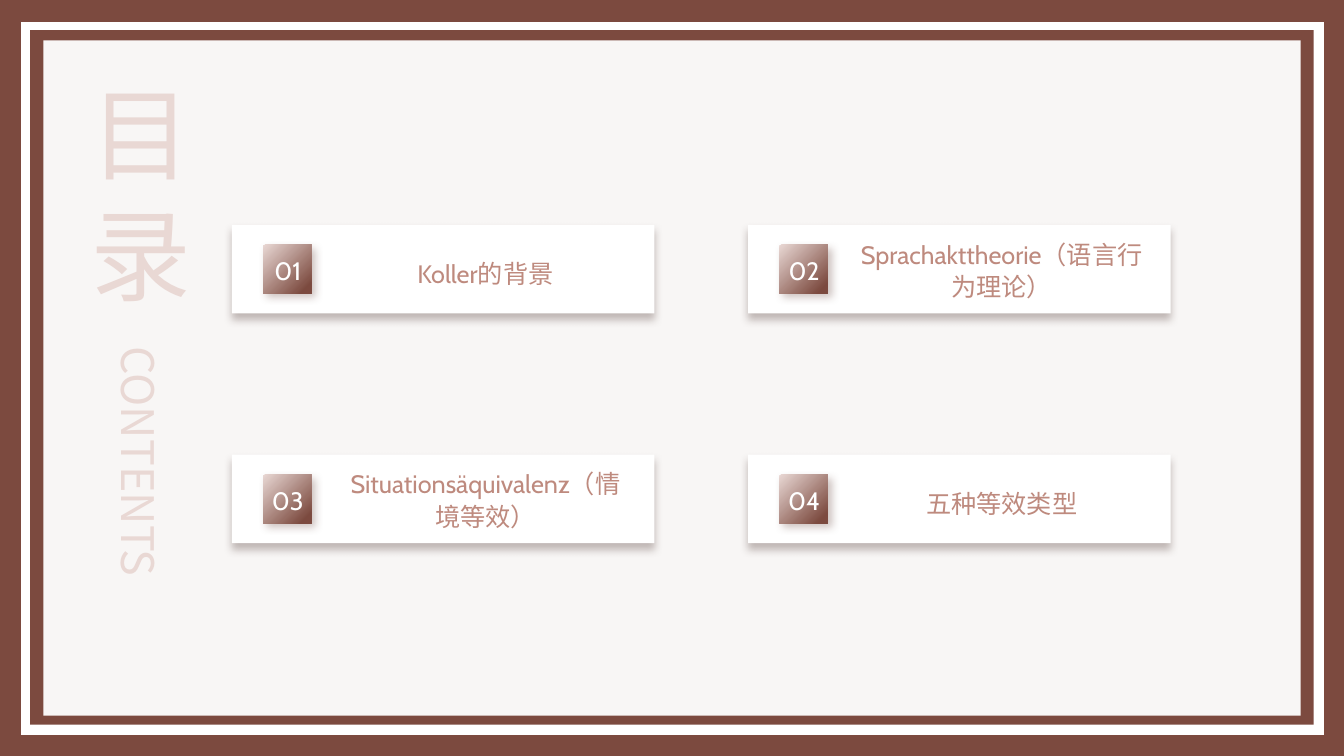
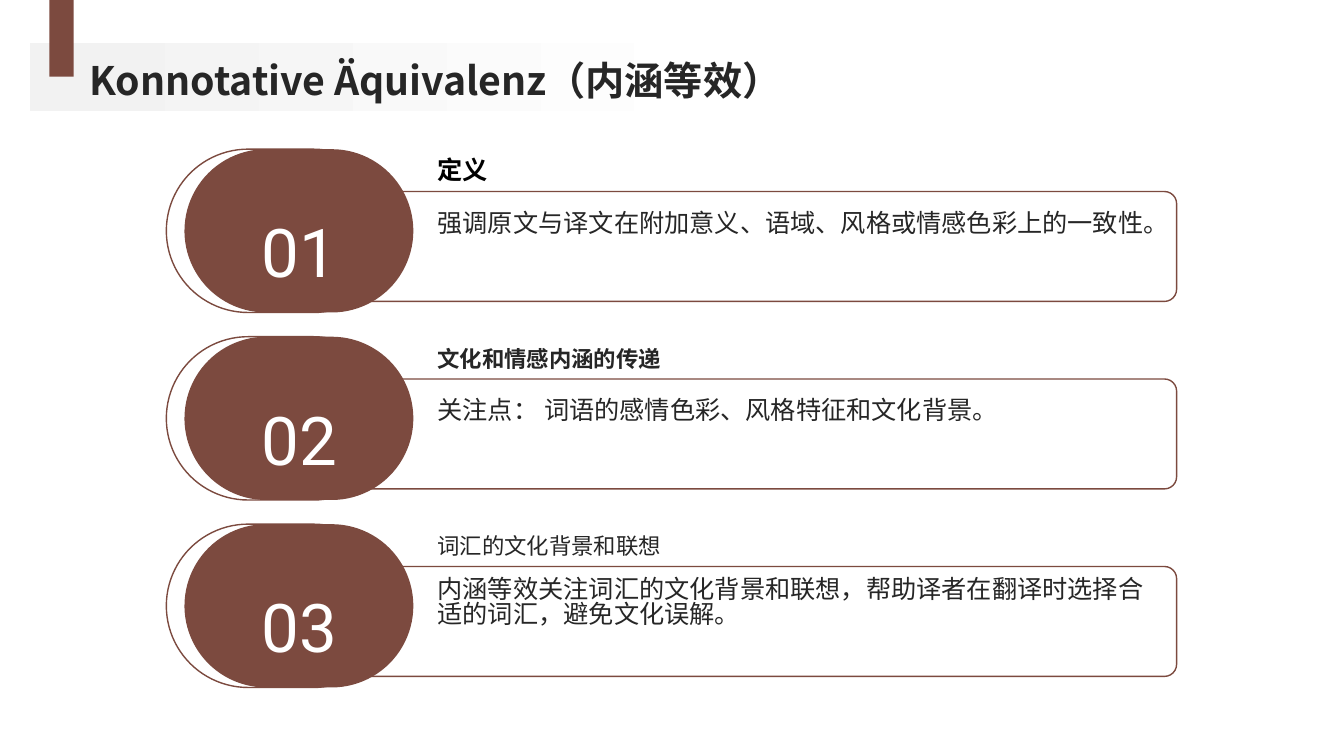
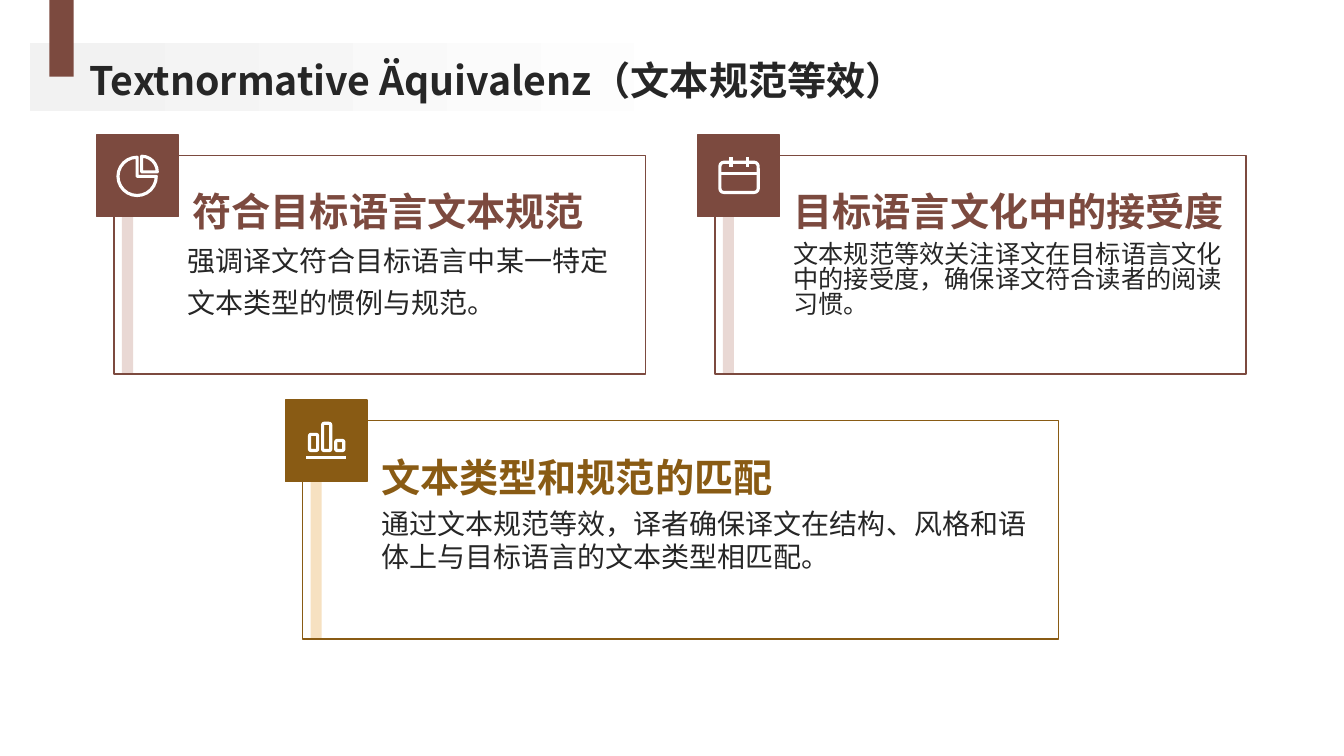
from lxml import etree
from pptx import Presentation
from pptx.dml.color import RGBColor
from pptx.enum.shapes import MSO_CONNECTOR, MSO_SHAPE
from pptx.enum.text import MSO_ANCHOR, MSO_AUTO_SIZE, PP_ALIGN
from pptx.oxml.ns import qn
from pptx.util import Inches, Pt

RECT, ROUND, PIE = MSO_SHAPE.RECTANGLE, MSO_SHAPE.ROUNDED_RECTANGLE, MSO_SHAPE.PIE
LINE = MSO_CONNECTOR.STRAIGHT
LEFT, MID = PP_ALIGN.LEFT, PP_ALIGN.CENTER
TOP, CORE, BASE = MSO_ANCHOR.TOP, MSO_ANCHOR.MIDDLE, MSO_ANCHOR.BOTTOM
FIT = MSO_AUTO_SIZE.NONE

HUE = {
    "brown": "7C4A3F", "rose": "BE8A7E", "blush": "E9D8D4", "paper": "F8F6F5",
    "gold": "895B14", "cream": "F6E1C1", "white": "FFFFFF", "black": "000000",
    "ink": "262626", "mist": "F2F2F2", "shade": "3E2520", "dusk": "5D382F",
}
SANS, CABIN, ROBOTO = "Noto Sans CJK SC", "Cabin", "Roboto"


def draw(slide, kind, at, fill=None, line=None, width=1, adj=(), fade=None, cast=None):
    """Add a shape; fade is (end colour, start stop, end stop, angle), cast is (colour, angle)."""
    shape = slide.shapes.add_shape(kind, *[Inches(v) for v in at])
    shape.shadow.inherit = False
    for i, value in enumerate(adj):
        shape.adjustments[i] = value
    if fade:
        end, first, last, angle = fade
        shape.fill.gradient()
        shape.fill.gradient_angle = -angle % 360
        for stop, hue, spot in zip(shape.fill.gradient_stops, (fill, end), (first, last)):
            stop.color.rgb = RGBColor.from_string(HUE[hue])
            stop.position = spot
    elif fill:
        shape.fill.solid()
        shape.fill.fore_color.rgb = RGBColor.from_string(HUE[fill])
    else:
        shape.fill.background()
    if line:
        shape.line.color.rgb = RGBColor.from_string(HUE[line])
        shape.line.width = Pt(width)
    else:
        shape.line.fill.background()
    if cast:
        hue, angle = cast
        glow = etree.SubElement(
            shape.element.spPr.find(qn("a:effectLst")), qn("a:outerShdw"),
            blurRad=str(Pt(6)), dist=str(Pt(4)), dir=str(angle * 60000),
            algn="ctr", rotWithShape="0")
        tint = etree.SubElement(glow, qn("a:srgbClr"), val=HUE[hue])
        etree.SubElement(tint, qn("a:alpha"), val="30000")


def write(slide, at, text, size, hue, face=SANS, bold=False, align=LEFT,
          anchor=TOP, gap=1.0, title=False):
    """Put one run in a text box, or in the title placeholder raised to the front."""
    if title:
        box = slide.shapes.title
        slide.shapes.element.append(box.element)
    else:
        box = slide.shapes.add_textbox(0, 0, 0, 0)
    box.left, box.top, box.width, box.height = [Inches(v) for v in at]
    frame = box.text_frame
    frame.word_wrap = True
    frame.auto_size = FIT
    frame.vertical_anchor = anchor
    frame.margin_left = frame.margin_right = frame.margin_top = frame.margin_bottom = 0
    para = frame.paragraphs[0]
    para.alignment = align
    para.line_spacing = gap
    run = para.add_run()
    run.text = text
    run.font.size = Pt(size)
    run.font.bold = bold
    run.font.name = face
    run.font.color.rgb = RGBColor.from_string(HUE[hue])
    etree.SubElement(run.font._element, qn("a:ea"), typeface=SANS)
    return box


deck = Presentation()
deck.slide_width, deck.slide_height = Inches(13.33), Inches(7.5)
toc, sense, norm = [deck.slides.add_slide(deck.slide_layouts[5]) for _ in range(3)]

# Shared heading of the content slides
for slide, head in ((sense, "Konnotative Äquivalenz（内涵等效）"),
                    (norm, "Textnormative Äquivalenz（文本规范等效）")):
    draw(slide, RECT, (0.3, 0.43, 8.24, 0.67), "mist", fade=("white", 0.05, 0.84, 0))
    draw(slide, RECT, (0.49, 0, 0.24, 0.76), "brown")
    write(slide, (0.89, 0.51, 11.7, 0.51), head, 28, "ink", bold=True,
          anchor=CORE, gap=1.1, title=True)

# Contents: nested frames and upright title
for at, hue in (((0, 0, 13.33, 7.5), "brown"), ((0.21, 0.22, 12.92, 7.07), "white"),
                ((0.3, 0.3, 12.73, 6.89), "brown"), ((0.43, 0.4, 12.47, 6.7), "paper")):
    draw(toc, RECT, at, hue)
write(toc, (0.8, 0.71, 1.2, 2.9), "目录", 72, "blush", align=MID, title=True)
side = write(toc, (1.08, 3.3, 0.6, 2.56), "CONTENTS", 32, "blush", align=MID, anchor=CORE)
side.text_frame._txBody.bodyPr.set("vert", "vert")

# Contents: two by two grid of cards
parts = (("Koller的背景", 1.3), ("Sprachakttheorie（语言行为理论）", 1.07),
         ("Situationsäquivalenz（情境等效）", 1.07), ("五种等效类型", 1.3))
for i, (text, gap) in enumerate(parts):
    x, y = 2.3 + i % 2 * 5.12, 2.23 + i // 2 * 2.28
    draw(toc, RECT, (x, y, 4.19, 0.88), "white", cast=("shade", 90))
    draw(toc, RECT, (x + 0.31, y + 0.2, 0.48, 0.48), "blush",
         fade=("brown", 0, 0.9, 45), cast=("dusk", 45))
    write(toc, (x + 1.06, y + 0.11, 2.91, 0.66), text, 18, "rose", CABIN,
          align=MID, anchor=CORE, gap=gap)
    write(toc, (x + 0.25, y + 0.24, 0.61, 0.4), f"{i + 1:02}", 18, "white", CABIN,
          align=MID, anchor=CORE, gap=1.1)

# Connotation: three numbered rows
rows = (
    ("定义", 18, "black", True,
     "强调原文与译文在附加意义、语域、风格或情感色彩上的一致性。", 1.12),
    ("文化和情感内涵的传递", 16, "ink", True,
     "关注点： 词语的感情色彩、风格特征和文化背景。", 1.12),
    ("词汇的文化背景和联想", 16, "ink", False,
     "内涵等效关注词汇的文化背景和联想，帮助译者在翻译时选择合适的词汇，避免文化误解。", 0.82),
)
for i, (head, size, hue, bold, body, gap) in enumerate(rows):
    y = 1.48 + i * 1.86
    draw(sense, ROUND, (1.65, y, 2.27, 1.62), "white", "brown", adj=(0.5,))
    draw(sense, ROUND, (2.7, y + 0.42, 8.97, 1.09), "white", "brown", adj=(0.11,))
    draw(sense, ROUND, (1.83, y, 2.27, 1.62), "brown", adj=(0.5,))
    write(sense, (2.24, y + 0.2, 1.46, 1.22), f"{i + 1:02}", 48, "white", ROBOTO,
          align=MID, anchor=CORE, gap=1.5)
    write(sense, (4.34, y + 0.54, 7.07, 0.84), body, 18, "ink", gap=gap)
    write(sense, (4.34, y - 0.25, 7.07, 0.6), head, size, hue, bold=bold,
          anchor=BASE, gap=1.2)

# Text norms: three cards, each with a strip and a badge
cards = (
    (1.13, 1.54, 5.27, "brown", "blush", "符合目标语言文本规范",
     "强调译文符合目标语言中某一特定文本类型的惯例与规范。", 20, 1.26, 0.73, 0.79),
    (7.09, 1.54, 5.27, "brown", "blush", "目标语言文化中的接受度",
     "文本规范等效关注译文在目标语言文化中的接受度，确保译文符合读者的阅读习惯。",
     18, 0.82, 0.78, 0.88),
    (3, 4.17, 7.5, "gold", "cream", "文本类型和规范的匹配",
     "通过文本规范等效，译者确保译文在结构、风格和语体上与目标语言的文本类型相匹配。",
     20, 0.96, 0.78, 0.88),
)
for x, y, wide, hue, tint, head, body, size, gap, dx, dy in cards:
    draw(norm, RECT, (x, y, wide, 2.17), "white", hue)
    draw(norm, RECT, (x + 0.08, y - 0.01, 0.11, 2.17), tint)
    write(norm, (x + dx, y + dy, wide - 0.94, 1.22), body, size, "ink", gap=gap)
    write(norm, (x + 0.78, y + 0.05, wide - 0.94, 0.74), head, 28, hue, bold=True,
          anchor=BASE, gap=1.3)
    draw(norm, RECT, (x - 0.17, y - 0.2, 0.81, 0.81), hue, hue)

# Badge icons: pie, calendar, bars
icons = (
    (PIE, (1.17, 1.56, 0.38, 0.38), ()),
    (PIE, (1.25, 1.55, 0.31, 0.31), (162, 0)),
    (ROUND, (7.14, 1.61, 0.38, 0.3), (0.13,)),
    (ROUND, (3.07, 4.31, 0.08, 0.16), (0.17,)),
    (ROUND, (3.2, 4.2, 0.08, 0.27), (0.17,)),
    (ROUND, (3.33, 4.37, 0.08, 0.1), (0.17,)),
)
for kind, at, adj in icons:
    draw(norm, kind, at, line="white", width=2.25, adj=adj)
for ends in ((7.14, 1.72, 7.52, 1.72), (7.25, 1.56, 7.25, 1.66),
             (7.41, 1.56, 7.41, 1.66), (3.04, 4.54, 3.43, 4.54)):
    bar = norm.shapes.add_connector(LINE, *[Inches(v) for v in ends])
    bar.line.color.rgb = RGBColor.from_string(HUE["white"])
    bar.line.width = Pt(2.25)
    etree.SubElement(bar.element.spPr, qn("a:effectLst"))

deck.save("out.pptx")
